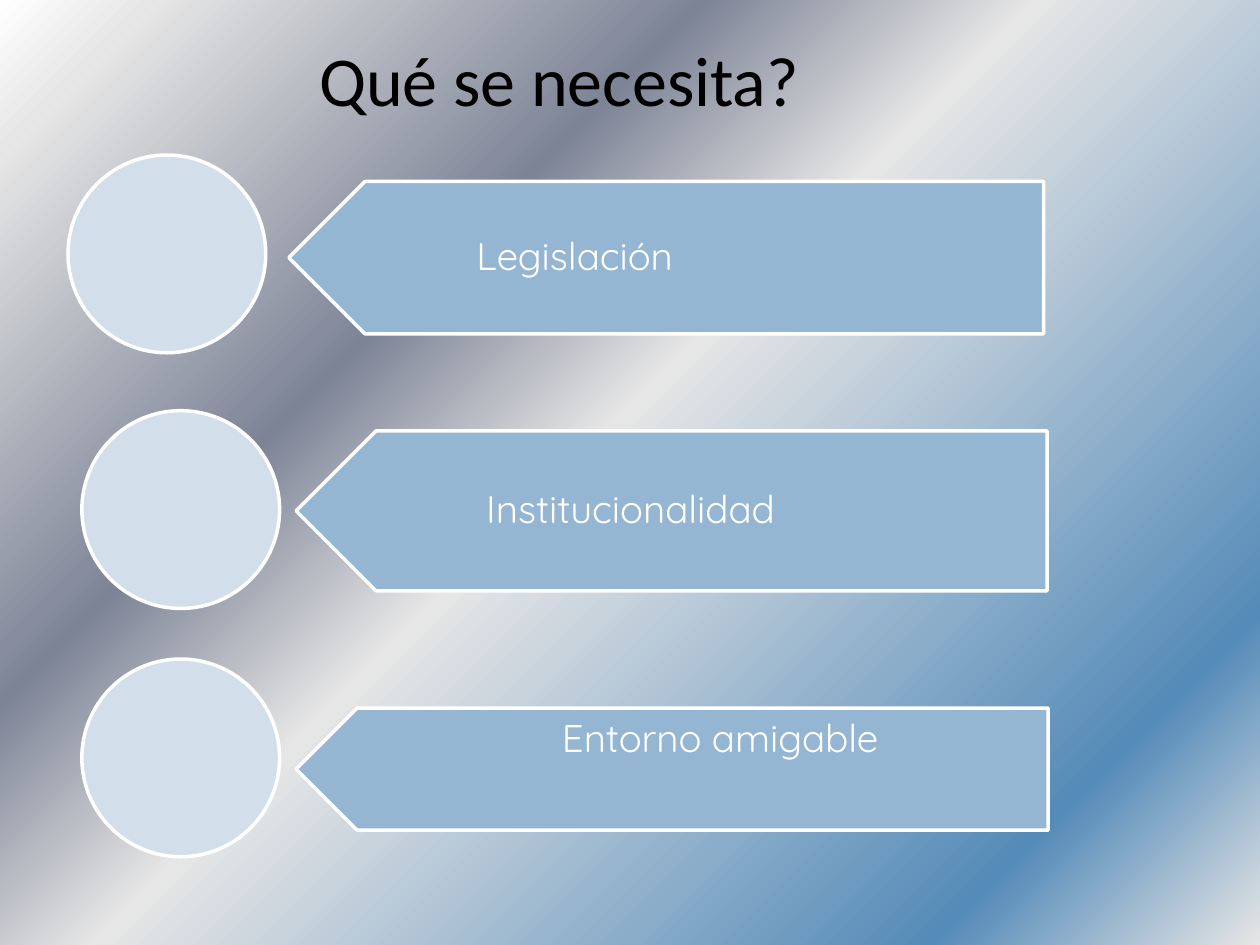
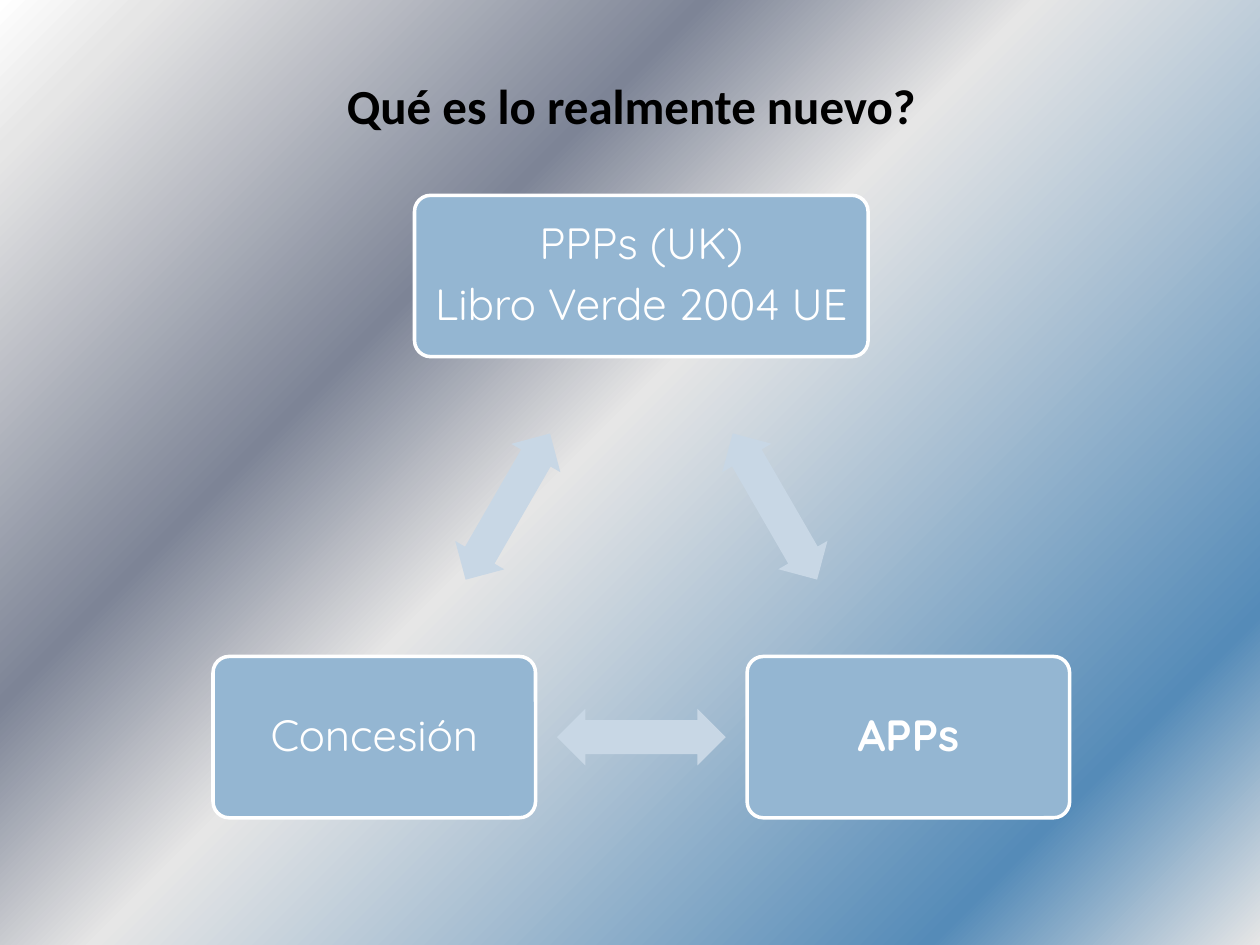
from lxml import etree
from pptx import Presentation
from pptx.dml.color import RGBColor
from pptx.enum.shapes import MSO_SHAPE
from pptx.enum.text import MSO_ANCHOR, PP_ALIGN
from pptx.oxml.ns import qn
from pptx.util import Pt

PENTAGON, OVAL = MSO_SHAPE.PENTAGON, MSO_SHAPE.OVAL
ROUNDED, DOUBLE_ARROW = MSO_SHAPE.ROUNDED_RECTANGLE, MSO_SHAPE.LEFT_RIGHT_ARROW
TOP, MIDDLE = MSO_ANCHOR.TOP, MSO_ANCHOR.MIDDLE
CENTER, JUSTIFY = PP_ALIGN.CENTER, PP_ALIGN.JUSTIFY

BLACK = RGBColor(0x00, 0x00, 0x00)
WHITE = RGBColor(0xFF, 0xFF, 0xFF)
BLUE = RGBColor(0x94, 0xB6, 0xD2)
PALE = RGBColor(0xD2, 0xDE, 0xEA)
ARROW = RGBColor(0xC8, 0xD7, 0xE5)
SILVER = RGBColor(0xE6, 0xE6, 0xE6)
SLATE = RGBColor(0x7D, 0x84, 0x96)
STEEL = RGBColor(0x55, 0x8B, 0xB8)
BACKGROUND = [(0, WHITE), (7, SILVER), (32, SLATE), (47, SILVER), (85, STEEL), (100, SILVER)]
TITLE_FONT, BODY_FONT = "Calibri", "Quicksand"

CIRCLE = 113
NODE_H = 92.2


def add_slide(prs):
    s = prs.slides.add_slide(prs.slide_layouts[6])
    fill = s.background.fill
    fill.gradient()
    fill.gradient_angle = 315
    stops = s.element.find(".//" + qn("a:gsLst"))
    for old in list(stops):
        stops.remove(old)
    for position, color in BACKGROUND:
        stop = etree.SubElement(stops, qn("a:gs"), pos=str(position * 1000))
        etree.SubElement(stop, qn("a:srgbClr"), val=str(color))
    return s


def set_text(sp, text, font, size, color=WHITE, align=CENTER, anchor=MIDDLE,
             insets=(7.2, 3.6, 7.2, 3.6), bold=False, line=None, after=None):
    tf = sp.text_frame
    tf.word_wrap = True
    tf.vertical_anchor = anchor
    tf.margin_left, tf.margin_top, tf.margin_right, tf.margin_bottom = map(Pt, insets)
    tf.text = text
    for p in tf.paragraphs:
        p.alignment = align
        p.line_spacing = line
        p.space_after = after
        for r in p.runs:
            r.font.name = font
            r.font.size = Pt(size)
            r.font.bold = bold
            r.font.color.rgb = color


def add_title(s, text, left, top, size, bold=False):
    sp = s.shapes.add_textbox(Pt(left), Pt(top), Pt(648), Pt(90))
    set_text(sp, text, TITLE_FONT, size, BLACK, bold=bold)


def add_shape(s, kind, left, top, width, height, fill, outlined=True, rotation=0):
    sp = s.shapes.add_shape(kind, Pt(left), Pt(top), Pt(width), Pt(height))
    sp.shadow.inherit = False
    sp.rotation = rotation
    sp.fill.solid()
    sp.fill.fore_color.rgb = fill
    if outlined:
        sp.line.color.rgb = WHITE
        sp.line.width = Pt(2)
    else:
        sp.line.fill.background()
    return sp


def add_need(s, text, plate, text_left, circle, align=JUSTIFY, anchor=MIDDLE):
    left, top, width, height = plate
    add_shape(s, PENTAGON, *plate, BLUE, rotation=180)
    sp = s.shapes.add_textbox(Pt(text_left), Pt(top), Pt(left + width - text_left), Pt(height))
    set_text(sp, text, BODY_FONT, 22, align=align, anchor=anchor,
             insets=(49.7, 6.5, 12.2, 6.5), line=0.9)
    add_shape(s, OVAL, *circle, CIRCLE, CIRCLE, PALE)


def add_node(s, text, x, y, width, bold=False):
    sp = add_shape(s, ROUNDED, x - width / 2, y - NODE_H / 2, width, NODE_H, BLUE)
    sp.adjustments[0] = 0.1
    set_text(sp, text, BODY_FONT, 25, insets=(8, 8, 8, 8), bold=bold, line=0.9, after=Pt(8))


def add_double_arrow(s, start, end, rotation):
    width, height = 96.5, 32.4
    x, y = [(a + b) / 2 for a, b in zip(start, end)]
    sp = add_shape(s, DOUBLE_ARROW, x - width / 2, y - height / 2, width, height,
                   ARROW, outlined=False, rotation=rotation)
    sp.adjustments[0] = 0.6
    sp.adjustments[1] = 0.5


def build_needs(prs):
    s = add_slide(prs)
    add_title(s, "Qué se necesita? ", 0, 0, 40)
    add_need(s, "\tLegislación", (165, 103.7, 431.3, 87.1), 186.5, (38.9, 88.6))
    add_need(s, "\tInstitucionalidad", (169.2, 246.2, 429.1, 91.4), 192.2, (46.8, 234.7))
    add_need(s, "Entorno amigable", (169.2, 404.6, 429.8, 69.8), 186.5, (46.8, 376.6),
             CENTER, TOP)


def build_novelty(prs):
    s = add_slide(prs)
    add_title(s, "Qué es lo realmente nuevo?", 36.7, 15.1, 28, bold=True)
    top, right, left = (366.5, 157.7), (519.1, 421.2), (213.9, 421.2)
    add_node(s, "PPPs (UK)\nLibro Verde 2004 UE", *top, 259.2)
    add_node(s, "APPs", *right, 184.3, bold=True)
    add_node(s, "Concesión", *left, 184.3)
    for start, end, rotation in [(top, right, 60), (right, left, 180), (left, top, 300)]:
        add_double_arrow(s, start, end, rotation)


def main():
    prs = Presentation()
    prs.slide_width, prs.slide_height = Pt(720), Pt(540)
    build_needs(prs)
    build_novelty(prs)
    prs.save("out.pptx")


if __name__ == "__main__":
    main()
